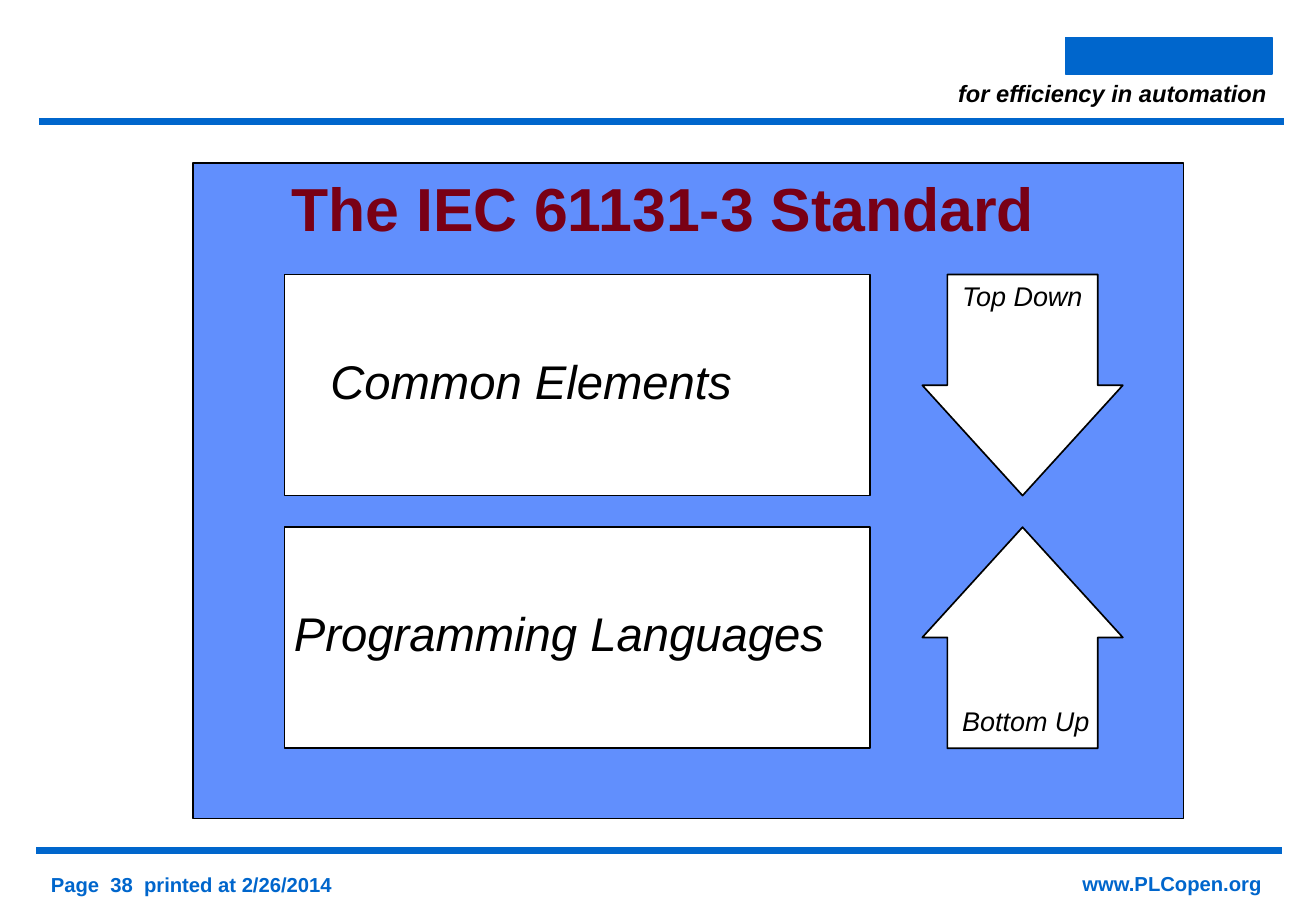
from pptx import Presentation
from pptx.dml.color import RGBColor
from pptx.enum.shapes import MSO_CONNECTOR, MSO_SHAPE as Shape
from pptx.enum.text import MSO_ANCHOR as Anchor, MSO_AUTO_SIZE as AutoSize, PP_ALIGN as Align
from pptx.oxml.ns import qn
from pptx.util import Inches, Pt
from lxml import etree

BLUE = RGBColor(0x00, 0x66, 0xCC)
PANEL = RGBColor(0x61, 0x8F, 0xFD)
MAROON = RGBColor(0x79, 0x00, 0x15)
BLACK = RGBColor(0, 0, 0)
WHITE = RGBColor(0xFF, 0xFF, 0xFF)

BOLD = {"bold": True}
ITALIC = {"italic": True}

deck = Presentation()
deck.slide_width, deck.slide_height = Inches(10.83), Inches(7.5)
page = deck.slides.add_slide(deck.slide_layouts[6])


def add_text(place, text, size, colour, styles, alignment=Align.LEFT, spacing=1.0,
             wrap=False, anchor=Anchor.TOP):
    box = page.shapes.add_textbox(*map(Inches, place))
    frame = box.text_frame
    frame.word_wrap = wrap
    frame.vertical_anchor = anchor
    frame.auto_size = AutoSize.NONE if wrap else AutoSize.SHAPE_TO_FIT_TEXT
    para = frame.paragraphs[0]
    para.alignment, para.line_spacing = alignment, spacing
    span = para.add_run()
    span.text = text
    span.font.color.rgb = colour
    for name, value in {"name": "Arial", "size": Pt(size), **styles}.items():
        setattr(span.font, name, value)


def add_block(kind, place, fill, line=BLACK):
    block = page.shapes.add_shape(kind, *map(Inches, place))
    block.shadow.inherit = False
    block.fill.solid()
    block.fill.fore_color.rgb = fill
    block.line.color.rgb = line
    block.line.width = Pt(1)
    return block


# Header and footer rules
for left, top in ((0.32, 1), (0.3, 7)):
    rule = page.shapes.add_connector(
        MSO_CONNECTOR.STRAIGHT, Inches(left), Inches(top), Inches(left + 10.25), Inches(top))
    rule.line.color.rgb = BLUE
    rule.line.width = Pt(4)
    etree.SubElement(rule._element.spPr, qn("a:effectLst"))

# Footer
add_text((0.32, 7.13, 2.53, 0.3), "Page  38  printed at 2/26/2014", 12, BLUE, BOLD)
add_text((8.81, 7.15, 1.7, 0.28), "www.PLCopen.org", 12, BLUE, BOLD, spacing=0.9)

# Header bar and tagline
add_block(Shape.RECTANGLE, (8.77, 0.31, 1.7, 0.3), BLUE, line=BLUE)
add_text((7.65, 0.6, 3.01, 0.32), "for efficiency in automation", 14, BLACK, BOLD | ITALIC,
         alignment=Align.CENTER, wrap=True)

# Panel and title
add_block(Shape.RECTANGLE, (1.59, 1.34, 8.15, 5.4), PANEL)
add_text((0.33, 1.33, 10.25, 0.83), "The IEC 61131-3 Standard", 36, MAROON, BOLD,
         alignment=Align.CENTER, spacing=0.9, wrap=True, anchor=Anchor.MIDDLE)

# Two parts of the standard, each with its arrow
rows = [
    (2.26, "Common Elements", 2.62, 3.72, Shape.DOWN_ARROW, "Top Down", 2.25, 1.21),
    (4.34, "Programming Languages", 2.32, 4.89, Shape.UP_ARROW, "Bottom Up", 5.75, 1.25),
]
for top, part, part_left, part_width, arrow_kind, label, label_top, label_width in rows:
    add_block(Shape.RECTANGLE, (2.34, top, 4.82, 1.82), WHITE)
    add_text((part_left, top + 0.59, part_width, 0.57), part, 28, BLACK, ITALIC)
    arrow = add_block(arrow_kind, (7.59, top, 1.65, 1.82), WHITE)
    arrow.adjustments[0], arrow.adjustments[1] = 0.75, 0.55
    add_text((7.82, label_top, label_width, 0.37), label, 16, BLACK, ITALIC)

deck.save("out.pptx")
